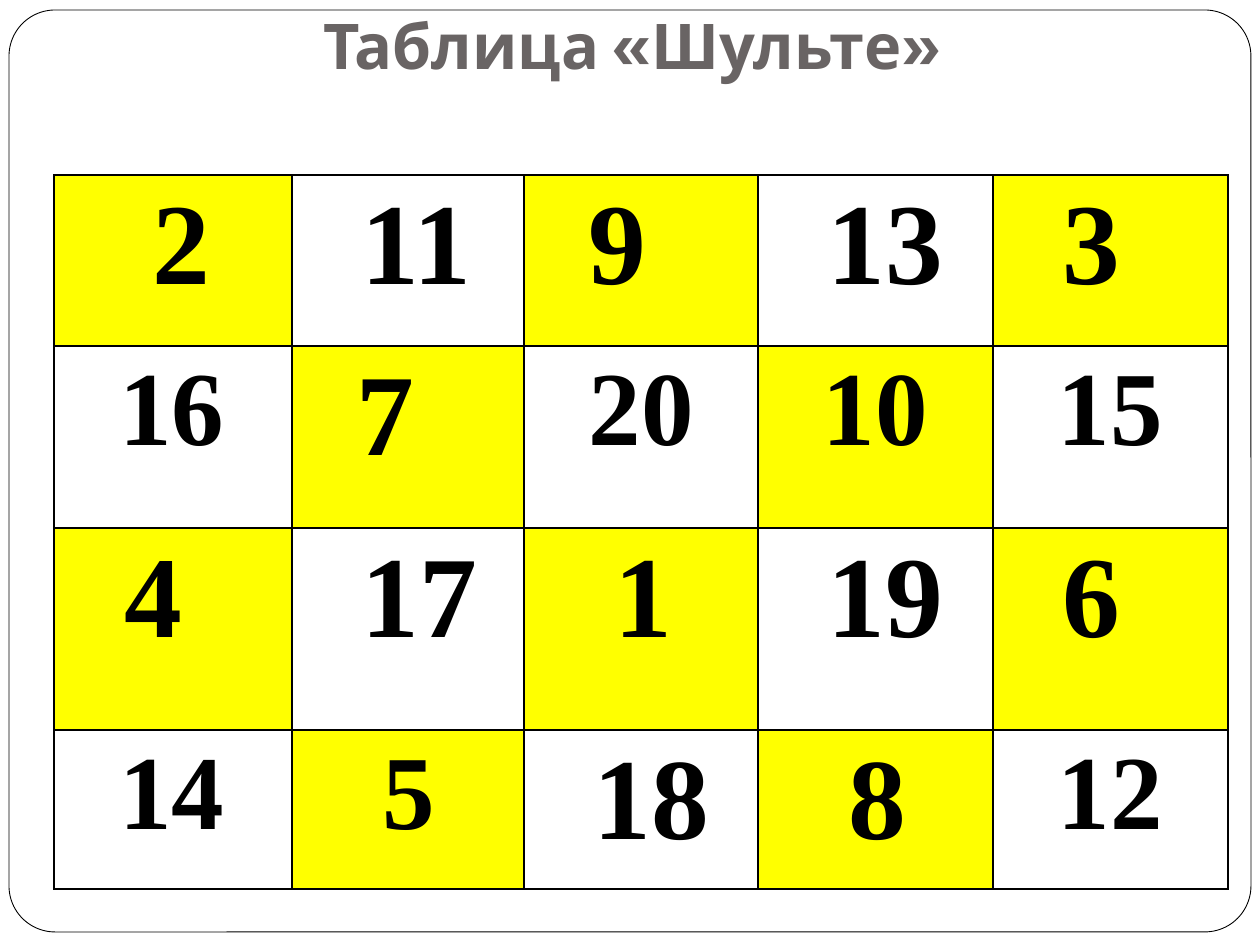
"""Build a slide with a Schulte table of numbers on a yellow and white checkerboard."""
from dataclasses import dataclass

from lxml.etree import SubElement
from pptx import Presentation
from pptx.dml.color import RGBColor
from pptx.enum.shapes import MSO_SHAPE
from pptx.enum.text import MSO_ANCHOR, PP_ALIGN
from pptx.oxml.ns import qn
from pptx.util import Emu, Pt


@dataclass(frozen=True)
class Theme:
    title_font: str = "Cabin"
    number_font: str = "Times New Roman"
    ink: str = "000000"
    title: str = "696464"
    paper: str = "FFFFFF"
    highlight: str = "FFFF00"
    title_size: int = 36
    large: int = 66
    small: int = 60
    frame_line: float = 0.5
    grid_line: int = 1


theme = Theme()


def px(length):
    return Emu(round(length * 914400 / 126))


def add_borders(cell):
    properties = cell._tc.get_or_add_tcPr()
    for side in ("a:lnL", "a:lnR", "a:lnT", "a:lnB"):
        line = SubElement(properties, qn(side), w=str(Pt(theme.grid_line)))
        fill = SubElement(line, qn("a:solidFill"))
        SubElement(fill, qn("a:srgbClr"), val=theme.ink)


presentation = Presentation()
presentation.slide_width, presentation.slide_height = px(1260), px(945)
slide = presentation.slides.add_slide(presentation.slide_layouts[5])

heading = slide.shapes.title
heading.left, heading.top, heading.width, heading.height = px(96), px(6), px(1071), px(86)
heading_text = heading.text_frame
heading_text.text = "Таблица «Шульте»"
heading_text.vertical_anchor = MSO_ANCHOR.TOP
heading_text.margin_top = heading_text.margin_bottom = 0
heading_line = heading_text.paragraphs[0]
heading_line.alignment = PP_ALIGN.CENTER
heading_line.font.name = theme.title_font
heading_line.font.size = Pt(theme.title_size)
heading_line.font.bold = True
heading_line.font.color.rgb = RGBColor.from_string(theme.title)

frame = slide.shapes.add_shape(MSO_SHAPE.ROUNDED_RECTANGLE, px(9), px(10), px(1242), px(922))
frame.adjustments[0] = 0.05
frame.shadow.inherit = False
frame.fill.solid()
frame.fill.fore_color.rgb = RGBColor.from_string(theme.paper)
frame.line.color.rgb = RGBColor.from_string(theme.ink)
frame.line.width = Pt(theme.frame_line)
heading._element.addprevious(frame._element)

large, small = theme.large, theme.small
column_widths = [238, 232, 234, 235, 235]
row_heights = [171, 182, 202, 159]
number_rows = [
    [(2, large, 99), (11, large, 70), (9, large, 65), (13, large, 70), (3, large, 70)],
    [(16, small, 65), (7, large, 65), (20, small, 65), (10, small, 65), (15, small, 65)],
    [(4, large, 70), (17, large, 70), (1, large, 91), (19, large, 70), (6, large, 70)],
    [(14, small, 65), (5, small, 91), (18, large, 70), (8, large, 91), (12, small, 65)],
]

grid = slide.shapes.add_table(
    len(row_heights), len(column_widths),
    px(54), px(175), px(sum(column_widths)), px(sum(row_heights)),
).table
grid.first_row = grid.horz_banding = False
for column, width in zip(grid.columns, column_widths):
    column.width = px(width)
for row, height in zip(grid.rows, row_heights):
    row.height = px(height)

for row_index, numbers in enumerate(number_rows):
    for column_index, (number, size, indent) in enumerate(numbers):
        cell = grid.cell(row_index, column_index)
        add_borders(cell)
        highlighted = (row_index + column_index) % 2 == 0
        cell.fill.solid()
        cell.fill.fore_color.rgb = RGBColor.from_string(
            theme.highlight if highlighted else theme.paper
        )
        cell.margin_left = px(indent)
        cell.text = str(number)
        digits = cell.text_frame.paragraphs[0]
        digits.font.name = theme.number_font
        digits.font.size = Pt(size)
        digits.font.bold = True
        digits.font.color.rgb = RGBColor.from_string(theme.ink)

presentation.save("out.pptx")
